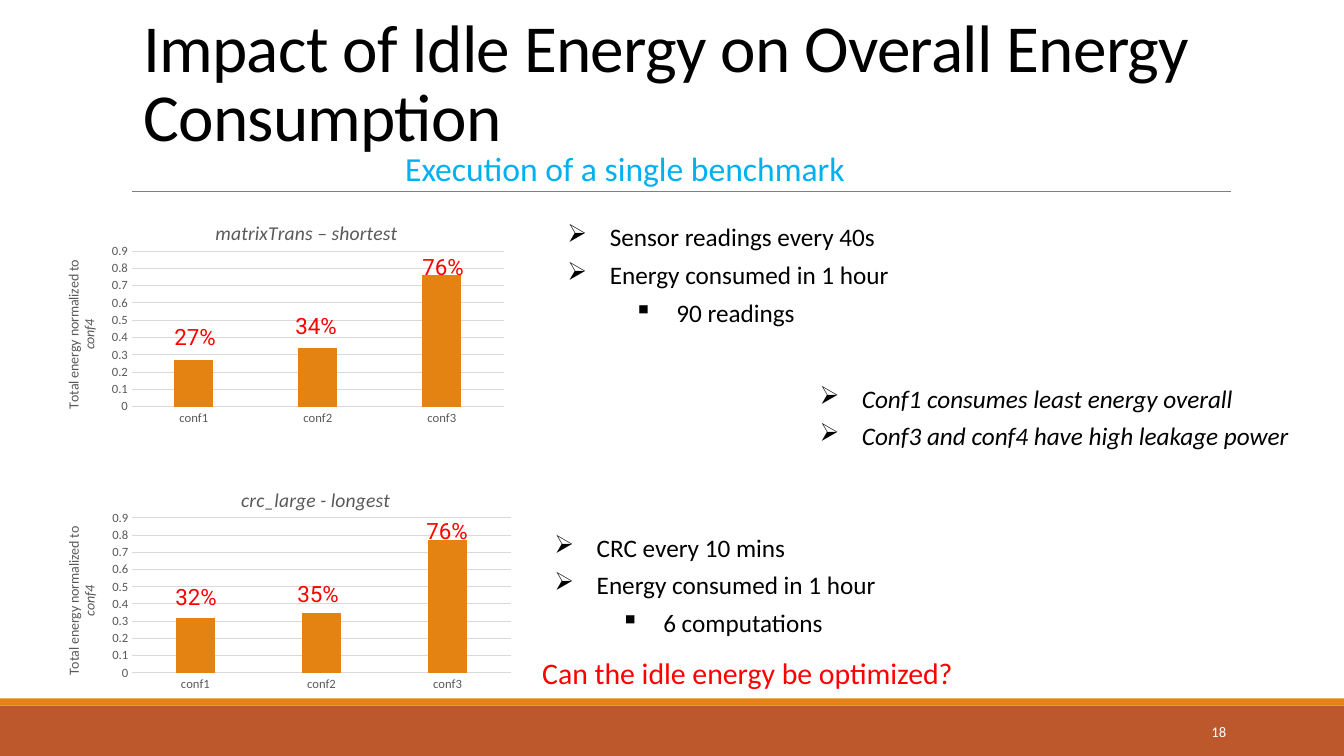
import lxml.etree
import pptx
import pptx.chart.data
import pptx.dml.color
import pptx.enum.chart
import pptx.enum.shapes
import pptx.enum.text
import pptx.oxml
import pptx.oxml.ns
import pptx.util

PX = 9144  # EMU per px, 100 px to the inch
FONT = "Calibri"
BLACK, GREY, PALE, RED = "000000", "595959", "D9D9D9", "FF0000"
ORANGE, RUST, BLUE, WHITE = "E48312", "BD582C", "00B0F0", "FFFFFF"
QN = pptx.oxml.ns.qn


def px(*lengths):
    return [length * PX for length in lengths]


def color(hex_string):
    return pptx.dml.color.RGBColor.from_string(hex_string)


def add_run(paragraph, text, size, hex_string, font=FONT, italic=False):
    run = paragraph.add_run()
    run.text = text
    run.font.size = pptx.util.Pt(size)
    run.font.name = font
    run.font.italic = italic
    run.font.color.rgb = color(hex_string)
    return run


def add_label(slide, box, text, size, hex_string, font=FONT, space_after=5.3):
    frame = slide.shapes.add_textbox(*px(*box)).text_frame
    frame.word_wrap = False
    frame.auto_size = pptx.enum.text.MSO_AUTO_SIZE.SHAPE_TO_FIT_TEXT
    paragraph = frame.paragraphs[0]
    paragraph.space_after = pptx.util.Pt(space_after)
    add_run(paragraph, text, size, hex_string, font)
    return frame


def add_bullets(slide, box, items, italic=False):
    """items holds (level, text) pairs."""
    frame = slide.shapes.add_textbox(*px(*box)).text_frame
    frame.word_wrap = True
    frame.auto_size = pptx.enum.text.MSO_AUTO_SIZE.SHAPE_TO_FIT_TEXT
    for index, (level, text) in enumerate(items):
        paragraph = frame.add_paragraph() if index else frame.paragraphs[0]
        paragraph.level = level
        paragraph.space_after = pptx.util.Pt(5.3)
        add_run(paragraph, text, 18, BLACK, italic=italic)
        properties = paragraph._p.get_or_add_pPr()
        properties.set("marL", str((42, 108)[level] * PX))
        properties.set("indent", str(-42 * PX))
        bullet = lxml.etree.SubElement(properties, QN("a:buChar"))
        bullet.set("char", "➢▪"[level])


def set_layout(parent, index, **fractions):
    """Place a chart part by fractions of the chart's size."""
    for old in parent.findall(QN("c:layout")):
        parent.remove(old)
    layout = pptx.oxml.parse_xml(
        f'<c:layout {pptx.oxml.ns.nsdecls("c")}><c:manualLayout/></c:layout>')
    manual = layout[0]
    settings = {"xMode": "edge", "yMode": "edge", **fractions}
    if "w" in fractions:
        settings = {"layoutTarget": "inner", **settings}
    for name, value in settings.items():
        lxml.etree.SubElement(manual, QN(f"c:{name}")).set("val", str(value))
    parent.insert(index, layout)


def add_energy_chart(slide, box, title, title_x, values, labels):
    data = pptx.chart.data.CategoryChartData()
    data.categories = ["conf1", "conf2", "conf3"]
    data.add_series("Series 1", values)
    chart = slide.shapes.add_chart(
        pptx.enum.chart.XL_CHART_TYPE.COLUMN_CLUSTERED, *px(*box), data).chart
    chart.has_legend = False
    chart.font.name = FONT
    chart.font.size = pptx.util.Pt(10)
    chart.font.color.rgb = color(BLACK)

    # Columns
    plot = chart.plots[0]
    plot.gap_width, plot.overlap = 219, -27
    plot.vary_by_categories = False
    fill = plot.series[0].format.fill
    fill.solid()
    fill.fore_color.rgb = color(ORANGE)

    # Axes
    for axis in (chart.category_axis, chart.value_axis):
        axis.major_tick_mark = pptx.enum.chart.XL_TICK_MARK.NONE
        axis.minor_tick_mark = pptx.enum.chart.XL_TICK_MARK.NONE
        axis.tick_labels.font.size = pptx.util.Pt(9)
        axis.tick_labels.font.name = FONT
        axis.tick_labels.font.color.rgb = color(GREY)
    value_axis = chart.value_axis
    value_axis.minimum_scale, value_axis.maximum_scale = 0, 0.9
    value_axis.major_unit = 0.1
    value_axis.format.line.fill.background()
    value_axis.has_major_gridlines = True
    for line in (chart.category_axis.format.line,
                 value_axis.major_gridlines.format.line):
        line.color.rgb = color(PALE)
        line.width = pptx.util.Pt(0.75)

    # Titles
    paragraph = value_axis.axis_title.text_frame.paragraphs[0]
    paragraph.font.bold = False
    add_run(paragraph, "Total energy normalized to ", 10, GREY).font.bold = False
    add_run(paragraph, "conf4", 10, GREY, italic=True).font.bold = False
    chart.has_title = True
    paragraph = chart.chart_title.text_frame.paragraphs[0]
    add_run(paragraph, title, 14, GREY, italic=True).font.bold = False
    set_layout(chart.chart_title._element, 1, x=title_x, y=0.09)
    plot_area = chart._chartSpace.find(f".//{QN('c:plotArea')}")
    set_layout(plot_area, 0, x=0.19, y=0.24, w=0.79, h=0.66)

    # Percentages over the columns
    for text, left, top in labels:
        add_label(slide, (box[0] + left, box[1] + top, 65, 37),
                  text, 16, RED, "Roboto")


def add_backdrop(slide):
    for top, height, fill_color in ((700, 50, RUST), (693, 7, ORANGE)):
        band = slide.shapes.add_shape(pptx.enum.shapes.MSO_SHAPE.RECTANGLE,
                                      *px(0, top, 1333, height))
        band.shadow.inherit = False
        band.fill.solid()
        band.fill.fore_color.rgb = color(fill_color)
        band.line.fill.background()
    rule = slide.shapes.add_connector(pptx.enum.shapes.MSO_CONNECTOR.STRAIGHT,
                                      *px(131, 190, 1221, 190))
    rule.line.color.rgb = color("808080")
    rule.line.width = pptx.util.Pt(0.5)
    lxml.etree.SubElement(rule._element.spPr, QN("a:effectLst"))


def add_heading(slide):
    title = slide.shapes.title
    title.left, title.top, title.width, title.height = px(132, 103, 1202, 56)
    frame = title.text_frame
    frame.word_wrap = True
    frame.auto_size = pptx.enum.text.MSO_AUTO_SIZE.NONE
    frame.vertical_anchor = pptx.enum.text.MSO_ANCHOR.BOTTOM
    paragraph = frame.paragraphs[0]
    paragraph.alignment = pptx.enum.text.PP_ALIGN.LEFT
    paragraph.line_spacing = 0.85
    paragraph.space_before = pptx.util.Pt(0)
    run = add_run(paragraph, "Impact of Idle Energy on Overall Energy Consumption",
                  48, BLACK)
    run.font._element.set("spc", "-50")
    add_label(slide, (392, 142, 461, 50), "Execution of a single benchmark",
              24, BLUE, space_after=0)


def add_slide_number(slide, box, number):
    frame = slide.shapes.add_textbox(*px(*box)).text_frame
    frame.word_wrap = True
    frame.vertical_anchor = pptx.enum.text.MSO_ANCHOR.MIDDLE
    frame.paragraphs[0].alignment = pptx.enum.text.PP_ALIGN.RIGHT
    add_run(frame.paragraphs[0], number, 10.5, WHITE)


def main():
    presentation = pptx.Presentation()
    presentation.slide_width, presentation.slide_height = px(1333, 750)
    slide = presentation.slides.add_slide(presentation.slide_layouts[5])
    add_backdrop(slide)
    add_heading(slide)

    # Shortest benchmark
    add_energy_chart(slide, (42, 193, 467, 234), "matrixTrans – shortest", 0.36,
                     (0.27, 0.34, 0.76),
                     (("27%", 121, 123), ("34%", 241, 112), ("76%", 367, 53)))
    add_bullets(slide, (553, 215, 599, 115),
                ((0, "Sensor readings every 40s"),
                 (0, "Energy consumed in 1 hour"), (1, "90 readings")))

    # Longest benchmark
    add_energy_chart(slide, (41, 458, 475, 233), "crc_large - longest", 0.41,
                     (0.32, 0.35, 0.77),
                     (("32%", 123, 116), ("35%", 244, 113), ("76%", 372, 50)))
    add_bullets(slide, (540, 523, 599, 115),
                ((0, "CRC every 10 mins"),
                 (0, "Energy consumed in 1 hour"), (1, "6 computations")))

    # Findings
    add_bullets(slide, (803, 375, 495, 78),
                ((0, "Conf1 consumes least energy overall"),
                 (0, "Conf3 and conf4 have high leakage power")), italic=True)
    add_label(slide, (528, 645, 434, 46), "Can the idle energy be optimized?",
              21.3, RED)
    add_slide_number(slide, (1083, 706, 143, 40), "18")
    presentation.save("out.pptx")


if __name__ == "__main__":
    main()
